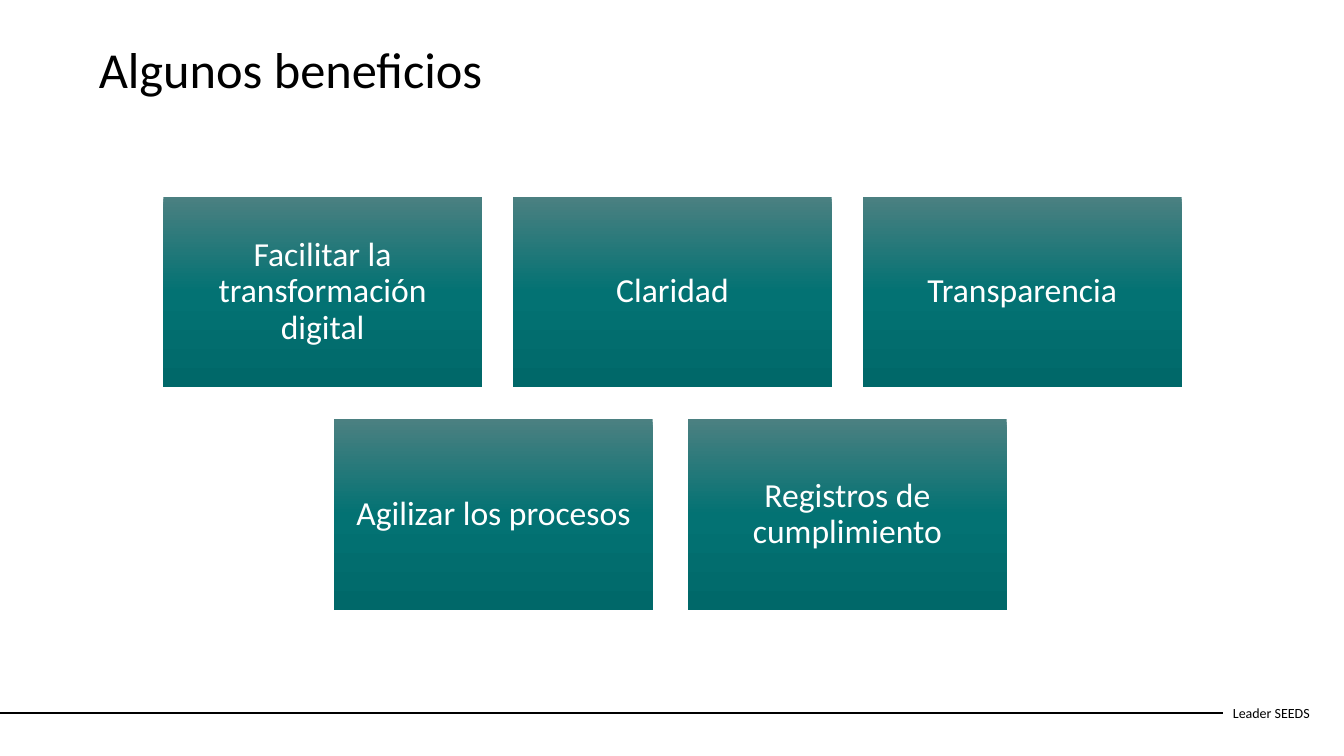
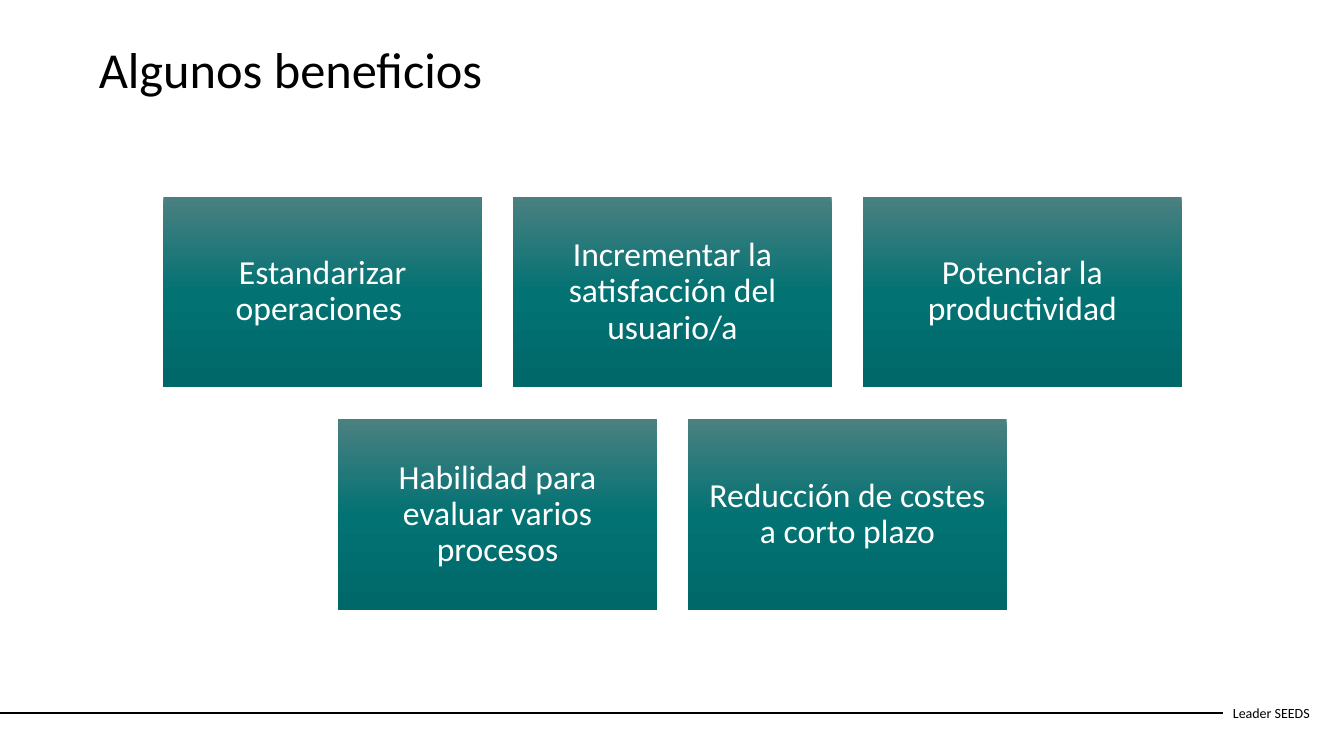
from copy import deepcopy
from dataclasses import dataclass
from lxml.etree import SubElement
from pptx import Presentation
from pptx.dml.color import RGBColor
from pptx.enum.shapes import MSO_CONNECTOR, MSO_SHAPE
from pptx.enum.text import MSO_ANCHOR, MSO_AUTO_SIZE, PP_ALIGN
from pptx.oxml.ns import qn
from pptx.util import Inches, Pt


@dataclass(frozen=True)
class Theme:
    font: str = "Calibri"
    ink: str = "000000"
    paper: str = "FFFFFF"
    shades: tuple = ((0, "4B8081"), (0.5, "037273"), (1, "006869"))
    title: int = 36
    body: int = 24
    foot: int = 10


theme = Theme()

# Card grid, in inches
WIDE, HIGH, GAP = 3.16, 1.89, 0.31
LEFT, TOP, ROW = 1.62, 1.95, 2.21

# Each slide: rows of cards, and the shift of the first card in each row
TITLE = "Algunos beneficios"
decks = [
    ([["Facilitar la transformación digital", "Claridad", "Transparencia"],
      ["Agilizar los procesos", "Registros de cumplimiento"]], (0, -0.04)),
    ([["Estandarizar operaciones ", "Incrementar la satisfacción del usuario/a",
       "Potenciar la productividad"],
      ["Habilidad para evaluar varios procesos",
       "Reducción de costes a corto plazo"]], (0, 0)),
]


def write(shape, text, size, color, align, anchor):
    frame = shape.text_frame
    frame.word_wrap = True
    frame.auto_size = MSO_AUTO_SIZE.NONE
    frame.vertical_anchor = anchor
    frame.text = text
    para = frame.paragraphs[0]
    para.alignment = align
    para.font.name = theme.font
    para.font.size = Pt(size)
    para.font.color.rgb = RGBColor.from_string(color)
    return para


def shade(shape):
    fill = shape.fill
    fill.gradient()
    fill.gradient_angle = 270
    first = shape.element.xpath(".//a:gs")[0]
    first.addnext(deepcopy(first))
    for stop, (place, color) in zip(fill.gradient_stops, theme.shades):
        stop.position = place
        stop.color.rgb = RGBColor.from_string(color)


prs = Presentation()
prs.slide_width, prs.slide_height = Inches(13.33), Inches(7.5)

for rows, shifts in decks:
    slide = prs.slides.add_slide(prs.slide_layouts[5])
    shapes = slide.shapes

    # Title
    title = shapes.title
    title.left, title.top = Inches(0.88), Inches(0.4)
    title.width, title.height = Inches(11.59), Inches(0.88)
    para = write(title, TITLE, theme.title, theme.ink, PP_ALIGN.LEFT, MSO_ANCHOR.TOP)
    para.line_spacing = 0.9

    # Footer rule and label
    rule = shapes.add_connector(MSO_CONNECTOR.STRAIGHT, Inches(-0.01), Inches(7.07),
                                Inches(12.13), Inches(7.07))
    rule.line.color.rgb = RGBColor.from_string(theme.ink)
    rule.line.width = Pt(1.5)
    SubElement(rule.element.spPr, qn("a:effectLst"))
    label = shapes.add_textbox(Inches(12.13), Inches(6.87), Inches(1.01), Inches(0.4))
    write(label, "Leader SEEDS", theme.foot, theme.ink, PP_ALIGN.LEFT, MSO_ANCHOR.MIDDLE)

    # Cards, each row centred under the first
    for r, (names, shift) in enumerate(zip(rows, shifts)):
        start = LEFT + (len(rows[0]) - len(names)) * (WIDE + GAP) / 2
        for c, name in enumerate(names):
            x = start + c * (WIDE + GAP) + (shift if c == 0 else 0)
            card = shapes.add_shape(MSO_SHAPE.RECTANGLE, Inches(x), Inches(TOP + r * ROW),
                                    Inches(WIDE), Inches(HIGH))
            card.shadow.inherit = False
            card.line.fill.background()
            shade(card)
            para = write(card, name, theme.body, theme.paper, PP_ALIGN.CENTER,
                         MSO_ANCHOR.MIDDLE)
            para.line_spacing = 0.9
            frame = card.text_frame
            frame.margin_left = frame.margin_right = Inches(0.1)
            frame.margin_top = frame.margin_bottom = Inches(0.1)

prs.save("out.pptx")
